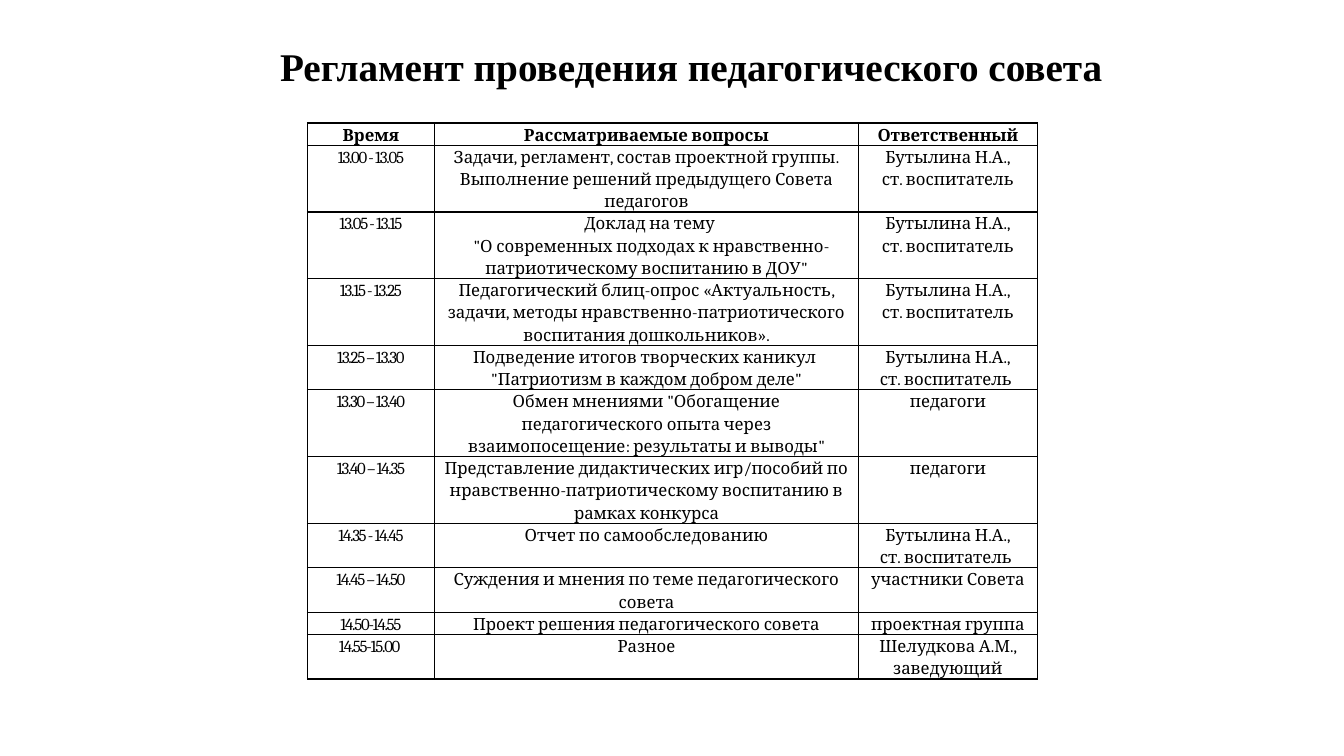
import lxml.etree
import pptx
import pptx.dml.color
import pptx.enum.text
import pptx.oxml.ns
import pptx.util

Pt = pptx.util.Pt
qn = pptx.oxml.ns.qn
CENTER = pptx.enum.text.PP_ALIGN.CENTER
MIDDLE = pptx.enum.text.MSO_ANCHOR.MIDDLE

SENIOR = "Бутылина Н.А.,\nст. воспитатель"
HEADINGS = ("Время", "Рассматриваемые вопросы", "Ответственный")
AGENDA = [
    ("13.00 - 13.05",
     "Задачи, регламент, состав проектной группы.\n"
     "Выполнение решений предыдущего Совета педагогов", SENIOR),
    ("13.05 - 13.15",
     "Доклад на тему \n"
     "\"О современных подходах к нравственно-патриотическому воспитанию в ДОУ\"", SENIOR),
    ("13.15 - 13.25",
     "Педагогический блиц-опрос «Актуальность, задачи, методы "
     "нравственно-патриотического воспитания дошкольников».", SENIOR),
    ("13.25 – 13.30",
     "Подведение итогов творческих каникул \n"
     "\"Патриотизм в каждом добром деле\"", SENIOR + " "),
    ("13.30 – 13.40",
     "Обмен мнениями \"Обогащение педагогического опыта через "
     "взаимопосещение: результаты и выводы\"", "педагоги"),
    ("13.40 – 14.35",
     "Представление дидактических игр/пособий по нравственно-патриотическому "
     "воспитанию в рамках конкурса", "педагоги"),
    ("14.35 - 14.45", "Отчет по самообследованию", SENIOR + " "),
    ("14.45 – 14.50", "Суждения и мнения по теме педагогического совета",
     "участники Совета"),
    ("14.50-14.55", "Проект решения педагогического совета", "проектная группа"),
    ("14.55-15.00 ", "Разное", "Шелудкова А.М., заведующий"),
]
COLUMN_WIDTHS = (90.72, 303.12, 127.44)
ROW_HEIGHTS = (15.3, 30.6, 46, 46, 30.6, 30.6, 30.6, 30.6, 15.3, 15.3, 30.6)
TALK_ROW = 2  # its topic has a first-line indent


def color(value):
    return pptx.dml.color.RGBColor.from_string(value)


def write(frame, text, *, font, size, ink="000000", bold=False, align=None,
          line_spacing=None, indent=0, tracking=0):
    """Fill a text frame, one paragraph per line of text."""
    for number, line in enumerate(text.split("\n")):
        para = frame.paragraphs[0] if number == 0 else frame.add_paragraph()
        para.alignment = align
        para.line_spacing = line_spacing
        if indent:
            properties = para._p.get_or_add_pPr()
            properties.set("marL", "0")
            properties.set("indent", str(Pt(indent)))
        span = para.add_run()
        span.text = line
        span.font.name = font
        span.font.size = Pt(size)
        span.font.bold = bold
        span.font.color.rgb = color(ink)
        if tracking:
            span.font._element.set("spc", str(round(tracking * 100)))


class Page:
    """The style and the current slide."""
    ink = "000000"
    title_font = "Times New Roman"
    table_font = "Cambria"

    def __init__(self, deck):
        self.slide = deck.slides.add_slide(deck.slide_layouts[6])
        self.slide.background.fill.solid()
        self.slide.background.fill.fore_color.rgb = color("FFFFFF")

    def title(self, text, left, top, width, height):
        frame = self.slide.shapes.add_textbox(
            Pt(left), Pt(top), Pt(width), Pt(height)).text_frame
        frame.word_wrap = True
        frame.vertical_anchor = MIDDLE
        write(frame, text, font=self.title_font, size=28, ink=self.ink,
              bold=True, indent=7.2)

    def border(self, cell):
        properties = cell._tc.get_or_add_tcPr()
        for position, side in enumerate(("a:lnL", "a:lnR", "a:lnT", "a:lnB")):
            line = lxml.etree.Element(qn(side), w=str(Pt(1)))
            fill = lxml.etree.SubElement(line, qn("a:solidFill"))
            lxml.etree.SubElement(fill, qn("a:srgbClr"), val=self.ink)
            properties.insert(position, line)

    def table(self, rows, left, top, widths, heights):
        table = self.slide.shapes.add_table(
            len(rows), len(widths), Pt(left), Pt(top),
            Pt(sum(widths)), Pt(sum(heights))).table
        table.first_row = table.horz_banding = False
        for column, width in zip(table.columns, widths):
            column.width = Pt(width)
        for row, height in zip(table.rows, heights):
            row.height = Pt(height)
        for row_number, texts in enumerate(rows):
            for column_number, text in enumerate(texts):
                cell = table.cell(row_number, column_number)
                cell.margin_left = cell.margin_right = Pt(5)
                cell.margin_top = cell.margin_bottom = Pt(0)
                cell.fill.background()
                self.border(cell)
                is_time = row_number > 0 and column_number == 0
                is_talk = (row_number, column_number) == (TALK_ROW, 1)
                write(cell.text_frame, text, font=self.table_font, size=12,
                      ink=self.ink, bold=row_number == 0, align=CENTER,
                      line_spacing=1.15, indent=7.2 if is_talk else 0,
                      tracking=-0.9 if is_time else 0)


def main():
    deck = pptx.Presentation()
    deck.slide_width, deck.slide_height = Pt(960), Pt(540)
    page = Page(deck)
    # Agenda table
    page.table([HEADINGS] + AGENDA, 219.6, 87.84, COLUMN_WIDTHS, ROW_HEIGHTS)
    # Heading
    page.title("Регламент проведения педагогического совета", 185.76, 23.76, 635.76, 46)
    deck.save("out.pptx")


if __name__ == "__main__":
    main()
